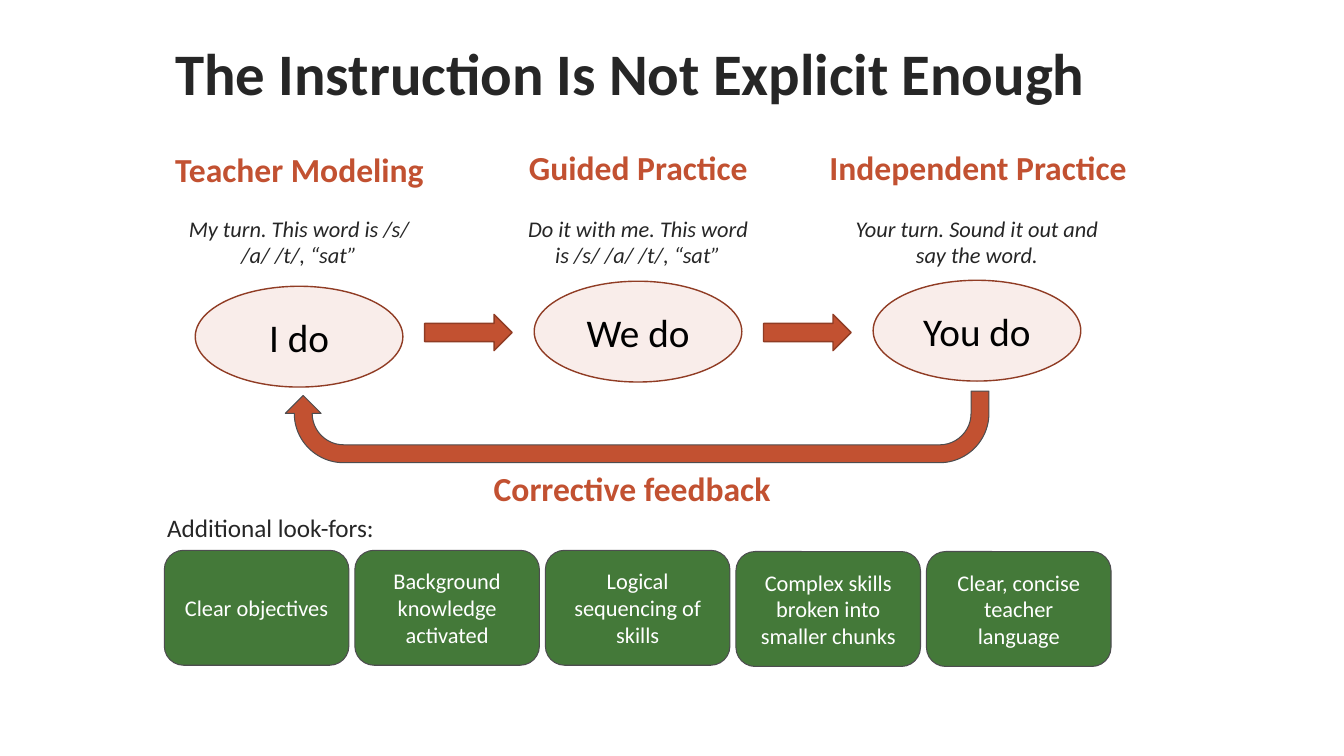
from pptx import Presentation
from pptx.dml.color import RGBColor
from pptx.enum.shapes import MSO_SHAPE
from pptx.enum.text import MSO_ANCHOR, MSO_AUTO_SIZE, PP_ALIGN
from pptx.util import Pt

LEFT, CENTER = PP_ALIGN.LEFT, PP_ALIGN.CENTER
MIDDLE = MSO_ANCHOR.MIDDLE
NO_FIT = MSO_AUTO_SIZE.NONE
OVAL, CARD = MSO_SHAPE.OVAL, MSO_SHAPE.ROUNDED_RECTANGLE
ARROW, RETURN_ARROW = MSO_SHAPE.RIGHT_ARROW, MSO_SHAPE.U_TURN_ARROW

INK = RGBColor(0x26, 0x26, 0x26)
RUST = RGBColor(0xC2, 0x51, 0x31)
DARK_RUST = RGBColor(0x90, 0x3C, 0x24)
BLUSH = RGBColor(0xF9, 0xED, 0xEA)
GREEN = RGBColor(0x44, 0x79, 0x39)
GRAY = RGBColor(0x4D, 0x4D, 0x4F)
BLACK = RGBColor(0, 0, 0)
WHITE = RGBColor(0xFF, 0xFF, 0xFF)

STAGES = [
    ("Teacher Modeling", (118, 103, 193.7, 36),
     "My turn. This word is /s/ /a/ /t/, “sat”", "I do", 204.5),
    ("Guided Practice", (370.8, 101.5, 172, 36),
     "Do it with me. This word is /s/ /a/ /t/, “sat”", "We do", 200.9),
    ("Independent Practice", (585.4, 101.5, 229, 36),
     "Your turn. Sound it out and say the word.", "You do", 200.2),
]
STAGE_PITCH = 242.1
LOOK_FORS = [
    ("Clear objectives", 393.1),
    ("Background knowledge activated", 393.1),
    ("Logical sequencing of skills", 393.1),
    ("Complex skills broken into smaller chunks", 394),
    ("Clear, concise teacher language", 394),
]
CARD_PITCH = 136.1


class Painter:
    """Draws styled elements on the current slide, with lengths in points."""

    def __init__(self, page, font_name):
        self.page = page
        self.font_name = font_name

    def set_text(self, frame, text, size, color, align=CENTER, bold=False, italic=False):
        frame.text = text
        para = frame.paragraphs[0]
        para.alignment = align
        font = para.runs[0].font
        font.name, font.size = self.font_name, Pt(size)
        font.bold, font.italic = bold, italic
        font.color.rgb = color

    def title(self, text, place):
        holder = self.page.shapes.title
        holder.left, holder.top, holder.width, holder.height = map(Pt, place)
        frame = holder.text_frame
        frame.margin_left = frame.margin_right = 0
        frame.margin_top = frame.margin_bottom = 0
        frame.vertical_anchor = MIDDLE
        frame.auto_size = NO_FIT
        self.set_text(frame, text, 42, INK, bold=True)

    def label(self, text, place, size, color, wrap=False, **style):
        box = self.page.shapes.add_textbox(*map(Pt, place))
        box.text_frame.word_wrap = wrap
        self.set_text(box.text_frame, text, size, color, **style)

    def shape(self, kind, place, fill, line, line_width):
        shape = self.page.shapes.add_shape(kind, *map(Pt, place))
        shape.shadow.inherit = False
        shape.fill.solid()
        shape.fill.fore_color.rgb = fill
        shape.line.color.rgb = line
        shape.line.width = Pt(line_width)
        return shape

    def captioned(self, kind, place, fill, line, line_width, text, size, color):
        shape = self.shape(kind, place, fill, line, line_width)
        shape.text_frame.word_wrap = True
        shape.text_frame.vertical_anchor = MIDDLE
        self.set_text(shape.text_frame, text, size, color)

    def return_arrow(self, place):
        shape = self.shape(RETURN_ARROW, place, RUST, GRAY, 0.75)
        shape.rotation = 180
        for index, value in enumerate((0.25, 0.25, 0.25, 0.69, 0.94)):
            shape.adjustments[index] = value


def main():
    deck = Presentation()
    deck.slide_width, deck.slide_height = Pt(960), Pt(540)
    page = deck.slides.add_slide(deck.slide_layouts[5])
    painter = Painter(page, "Calibri")

    painter.title("The Instruction Is Not Explicit Enough", (41, -0.7, 818.5, 104.4))
    for index, (heading, heading_place, prompt, role, oval_top) in enumerate(STAGES):
        shift = index * STAGE_PITCH
        painter.label(heading, heading_place, 24, RUST, align=LEFT, bold=True)
        painter.label(prompt, (118.2 + shift, 149.8, 190.8, 46), 16, INK,
                      wrap=True, italic=True)
        painter.captioned(OVAL, (139.5 + shift, oval_top, 148.3, 72),
                          BLUSH, DARK_RUST, 1, role, 28, BLACK)
        if index < len(STAGES) - 1:
            painter.shape(ARROW, (303.3 + shift, 224.6, 62.6, 25.9), RUST, DARK_RUST, 1)

    painter.return_arrow((203.8, 279.4, 502.6, 51.1))
    painter.label("Corrective feedback", (344.2, 330.5, 214.6, 36), 24, RUST, bold=True)
    painter.label("Additional look-fors:", (112.3, 362.2, 163.4, 29), 18, INK, align=LEFT)
    for index, (look_for, top) in enumerate(LOOK_FORS):
        painter.captioned(CARD, (117.4 + index * CARD_PITCH, top, 131.8, 82.1),
                          GREEN, GRAY, 0.75, look_for, 16, WHITE)

    deck.save("out.pptx")


if __name__ == "__main__":
    main()
